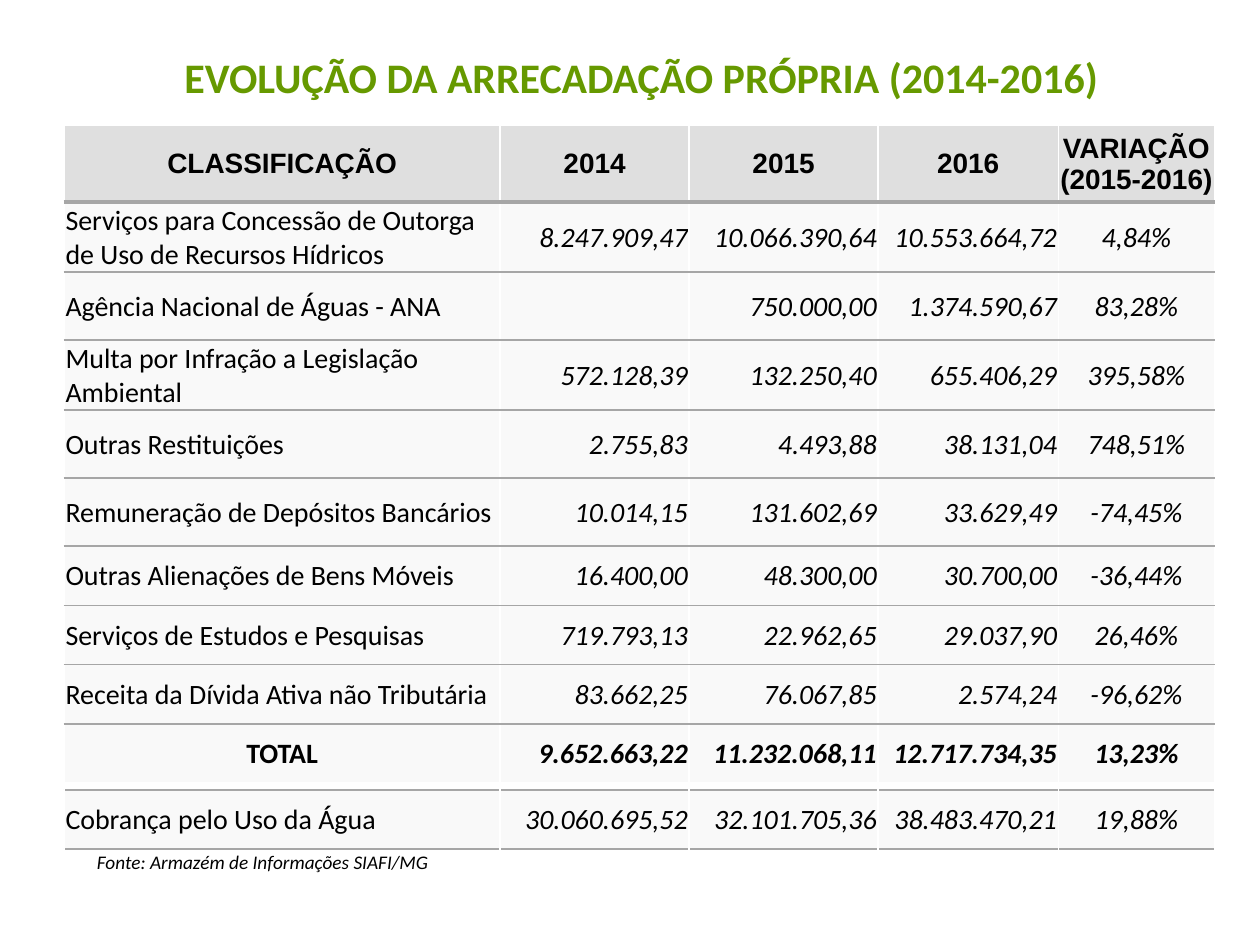
from dataclasses import dataclass

from lxml.etree import SubElement
from pptx import Presentation
from pptx.dml.color import RGBColor
from pptx.enum.text import MSO_ANCHOR, PP_ALIGN
from pptx.oxml.ns import qn
from pptx.slide import Slide
from pptx.table import _Cell
from pptx.text.text import _Paragraph
from pptx.util import Pt


@dataclass(frozen=True)
class Theme:
    title_color: str = "669900"
    text_color: str = "000000"
    header_fill: str = "DFDFDF"
    body_fill: str = "F9F9F9"
    gap_line: str = "FFFFFF"
    rule_line: str = "A6A6A6"
    header_font: str = "Arial"
    body_font: str = "Calibri"
    title_size: float = 24
    table_size: float = 16
    source_size: float = 11


@dataclass(frozen=True)
class Line:
    color: str
    width: float = 1


@dataclass(frozen=True)
class Row:
    values: tuple[str, ...]
    height: float
    top: Line
    bottom: Line
    header: bool = False
    total: bool = False


THEME = Theme()
GAP = Line(THEME.gap_line)
RULE = Line(THEME.rule_line)
HEADER_RULE = Line(THEME.rule_line, 2.25)

TABLE_LEFT = 36.75
COLUMN_WIDTHS = (249, 108, 108, 103, 89.3)
VALUE_ALIGNMENTS = (PP_ALIGN.LEFT,) + (PP_ALIGN.RIGHT,) * 3 + (PP_ALIGN.CENTER,)
HEADER_HEIGHT, TALL_HEIGHT, SHORT_HEIGHT = 44, 39, 33.84

HEADINGS = ("CLASSIFICAÇÃO", "2014", "2015", "2016", "VARIAÇÃO (2015-2016)")
TALL_REVENUES = (
    ("Serviços para Concessão de Outorga de Uso de Recursos Hídricos",
     "8.247.909,47", "10.066.390,64", "10.553.664,72", "4,84%"),
    ("Agência Nacional de Águas - ANA", "", "750.000,00", "1.374.590,67", "83,28%"),
    ("Multa por Infração a Legislação Ambiental",
     "572.128,39", "132.250,40", "655.406,29", "395,58%"),
    ("Outras Restituições", "2.755,83", "4.493,88", "38.131,04", "748,51%"),
    ("Remuneração de Depósitos Bancários",
     "10.014,15", "131.602,69", "33.629,49", "-74,45%"),
)
SHORT_REVENUES = (
    ("Outras Alienações de Bens Móveis", "16.400,00", "48.300,00", "30.700,00", "-36,44%"),
    ("Serviços de Estudos e Pesquisas", "719.793,13", "22.962,65", "29.037,90", "26,46%"),
    ("Receita da Dívida Ativa não Tributária",
     "83.662,25", "76.067,85", "2.574,24", "-96,62%"),
)
TOTAL = ("TOTAL", "9.652.663,22", "11.232.068,11", "12.717.734,35", "13,23%")
WATER_CHARGE = ("Cobrança pelo Uso da Água",
                "30.060.695,52", "32.101.705,36", "38.483.470,21", "19,88%")


def format_paragraph(paragraph: _Paragraph, size: float, color: str, name: str,
                     bold: bool = False, italic: bool = False) -> None:
    for run in paragraph.runs:
        run.font.size = Pt(size)
        run.font.name = name
        run.font.bold = bold
        run.font.italic = italic
        run.font.color.rgb = RGBColor.from_string(color)


def add_borders(cell: _Cell, row: Row) -> None:
    properties = cell._tc.get_or_add_tcPr()
    borders = {"a:lnL": GAP, "a:lnR": GAP, "a:lnT": row.top, "a:lnB": row.bottom}
    for tag, line in borders.items():
        border = SubElement(properties, qn(tag), w=str(int(Pt(line.width))))
        fill = SubElement(border, qn("a:solidFill"))
        SubElement(fill, qn("a:srgbClr"), val=line.color)


def fill_cell(cell: _Cell, row: Row, column: int) -> None:
    add_borders(cell, row)
    cell.fill.solid()
    cell.fill.fore_color.rgb = RGBColor.from_string(
        THEME.header_fill if row.header else THEME.body_fill)
    cell.margin_left = cell.margin_right = cell.margin_top = Pt(0.72)
    cell.margin_bottom = Pt(0)
    cell.vertical_anchor = MSO_ANCHOR.MIDDLE
    paragraph = cell.text_frame.paragraphs[0]
    paragraph.text = row.values[column]
    centered = row.header or (row.total and column == 0)
    paragraph.alignment = PP_ALIGN.CENTER if centered else VALUE_ALIGNMENTS[column]
    format_paragraph(paragraph, THEME.table_size, THEME.text_color,
                     THEME.header_font if row.header else THEME.body_font,
                     bold=row.header or row.total,
                     italic=not row.header and column > 0)


def add_revenue_table(slide: Slide, top: float, rows: list[Row]) -> None:
    table = slide.shapes.add_table(
        len(rows), len(COLUMN_WIDTHS), Pt(TABLE_LEFT), Pt(top),
        Pt(sum(COLUMN_WIDTHS)), Pt(sum(row.height for row in rows))).table
    table.first_row = False
    table.horz_banding = False
    for column, width in zip(table.columns, COLUMN_WIDTHS):
        column.width = Pt(width)
    for row_index, row in enumerate(rows):
        table.rows[row_index].height = Pt(row.height)
        for column_index in range(len(COLUMN_WIDTHS)):
            fill_cell(table.cell(row_index, column_index), row, column_index)


def add_title(slide: Slide, text: str) -> None:
    title = slide.shapes.title
    title.left, title.top, title.width, title.height = Pt(42.5), Pt(26), Pt(648), Pt(62.6)
    title.text_frame.text = text
    title.text_frame.vertical_anchor = MSO_ANCHOR.TOP
    paragraph = title.text_frame.paragraphs[0]
    paragraph.alignment = PP_ALIGN.CENTER
    format_paragraph(paragraph, THEME.title_size, THEME.title_color,
                     THEME.body_font, bold=True)


def add_source(slide: Slide, text: str) -> None:
    source = slide.shapes.add_textbox(Pt(48.24), Pt(485.3), Pt(572.4), Pt(14.4))
    text_frame = source.text_frame
    text_frame.word_wrap = True
    text_frame.vertical_anchor = MSO_ANCHOR.MIDDLE
    text_frame.text = text
    format_paragraph(text_frame.paragraphs[0], THEME.source_size, THEME.text_color,
                     THEME.body_font, italic=True)


def main() -> None:
    presentation = Presentation()
    presentation.slide_width, presentation.slide_height = Pt(720), Pt(540)
    slide = presentation.slides.add_slide(presentation.slide_layouts[5])

    rows = [Row(HEADINGS, HEADER_HEIGHT, GAP, HEADER_RULE, header=True)]
    rows += [Row(values, TALL_HEIGHT, RULE if index else HEADER_RULE, RULE)
             for index, values in enumerate(TALL_REVENUES)]
    rows += [Row(values, SHORT_HEIGHT, RULE, RULE) for values in SHORT_REVENUES]
    rows.append(Row(TOTAL, SHORT_HEIGHT, RULE, GAP, total=True))

    add_revenue_table(slide, 71.5, rows)
    add_title(slide, "EVOLUÇÃO DA ARRECADAÇÃO PRÓPRIA (2014-2016)")
    add_source(slide, "Fonte: Armazém de Informações SIAFI/MG")
    add_revenue_table(slide, 451.4, [Row(WATER_CHARGE, SHORT_HEIGHT, RULE, RULE)])
    presentation.save("out.pptx")


if __name__ == "__main__":
    main()
